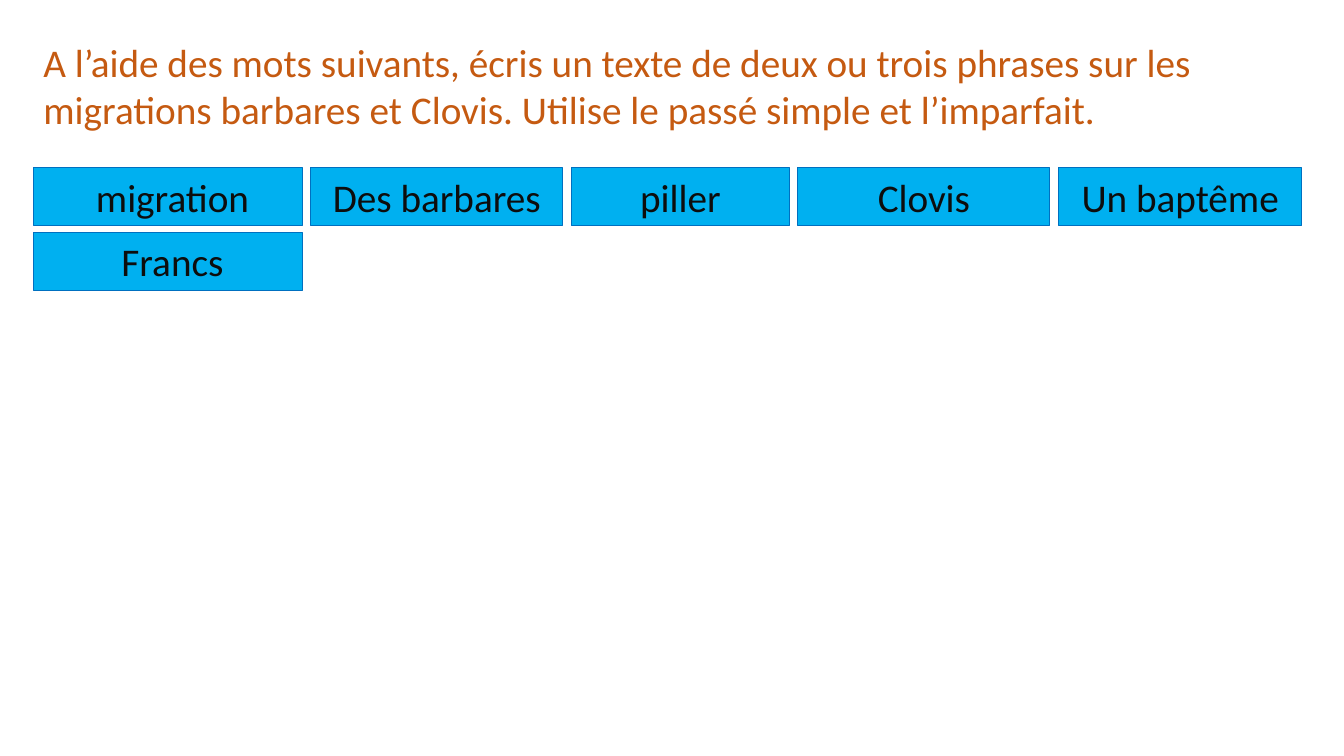
from dataclasses import dataclass

from pptx import Presentation
from pptx.dml.color import RGBColor
from pptx.enum.shapes import MSO_SHAPE as Shape
from pptx.enum.text import MSO_ANCHOR as Anchor, MSO_AUTO_SIZE as AutoSize, PP_ALIGN as Align
from pptx.util import Inches, Pt

COLORS = {
    "white": "FFFFFF",
    "instruction": "C55A11",
    "card": "00B0F0",
    "card_line": "0070C0",
    "word": "0D0D0D",
}

# The slide is a grid of 160 columns by 90 rows, each 1/12 inch.
UNIT = Inches(1) / 12
COLUMNS, ROWS = 160, 90
MARGIN = 4
GAP = 1
CARD_TOP = 20
CARD_HEIGHT = 6.84
CARD_PITCH = 7.7


@dataclass(frozen=True)
class Word:
    text: str
    columns: int


@dataclass(frozen=True)
class Style:
    fill: str
    line: str
    font: str
    align: Align


INSTRUCTION = (
    "A l’aide des mots suivants, écris un texte de deux ou trois phrases sur les "
    "migrations barbares et Clovis. Utilise le passé simple et l’imparfait."
)
INSTRUCTION_STYLE = Style("white", "white", "instruction", Align.LEFT)
CARD_STYLE = Style("card", "card_line", "word", Align.CENTER)

WORD_ROWS = [
    [
        Word(" migration", 32),
        Word("Des barbares", 30),
        Word("piller", 26),
        Word("Clovis", 30),
        Word("Un baptême", 29),
    ],
    [Word(" Francs", 32)],
]


def rgb(name: str) -> RGBColor:
    return RGBColor.from_string(COLORS[name])


def grid(units: float) -> int:
    return round(units * UNIT)


def add_box(s, text: str, left: float, top: float, width: float, height: float,
            style: Style) -> None:
    """Add a text rectangle placed in grid columns and rows."""
    sp = s.shapes.add_shape(Shape.RECTANGLE, grid(left), grid(top), grid(width), grid(height))
    sp.shadow.inherit = False
    sp.fill.solid()
    sp.fill.fore_color.rgb = rgb(style.fill)
    sp.line.color.rgb = rgb(style.line)
    sp.line.width = Pt(0.75)

    tf = sp.text_frame
    tf.text = text
    tf.word_wrap = True
    tf.auto_size = AutoSize.SHAPE_TO_FIT_TEXT
    tf.vertical_anchor = Anchor.TOP
    p = tf.paragraphs[0]
    p.alignment = style.align
    font = p.runs[0].font
    font.name = "Calibri"
    font.size = Pt(28)
    font.color.rgb = rgb(style.font)


def add_word_row(s, words: list[Word], top: float) -> None:
    left = MARGIN
    for word in words:
        add_box(s, word.text, left, top, word.columns, CARD_HEIGHT, CARD_STYLE)
        left += word.columns + GAP


def main() -> None:
    prs = Presentation()
    prs.slide_width, prs.slide_height = grid(COLUMNS), grid(ROWS)
    s = prs.slides.add_slide(prs.slide_layouts[6])

    add_box(s, INSTRUCTION, MARGIN, MARGIN, 149, 12.5, INSTRUCTION_STYLE)
    for i, words in enumerate(WORD_ROWS):
        add_word_row(s, words, CARD_TOP + i * CARD_PITCH)

    prs.save("out.pptx")


if __name__ == "__main__":
    main()
